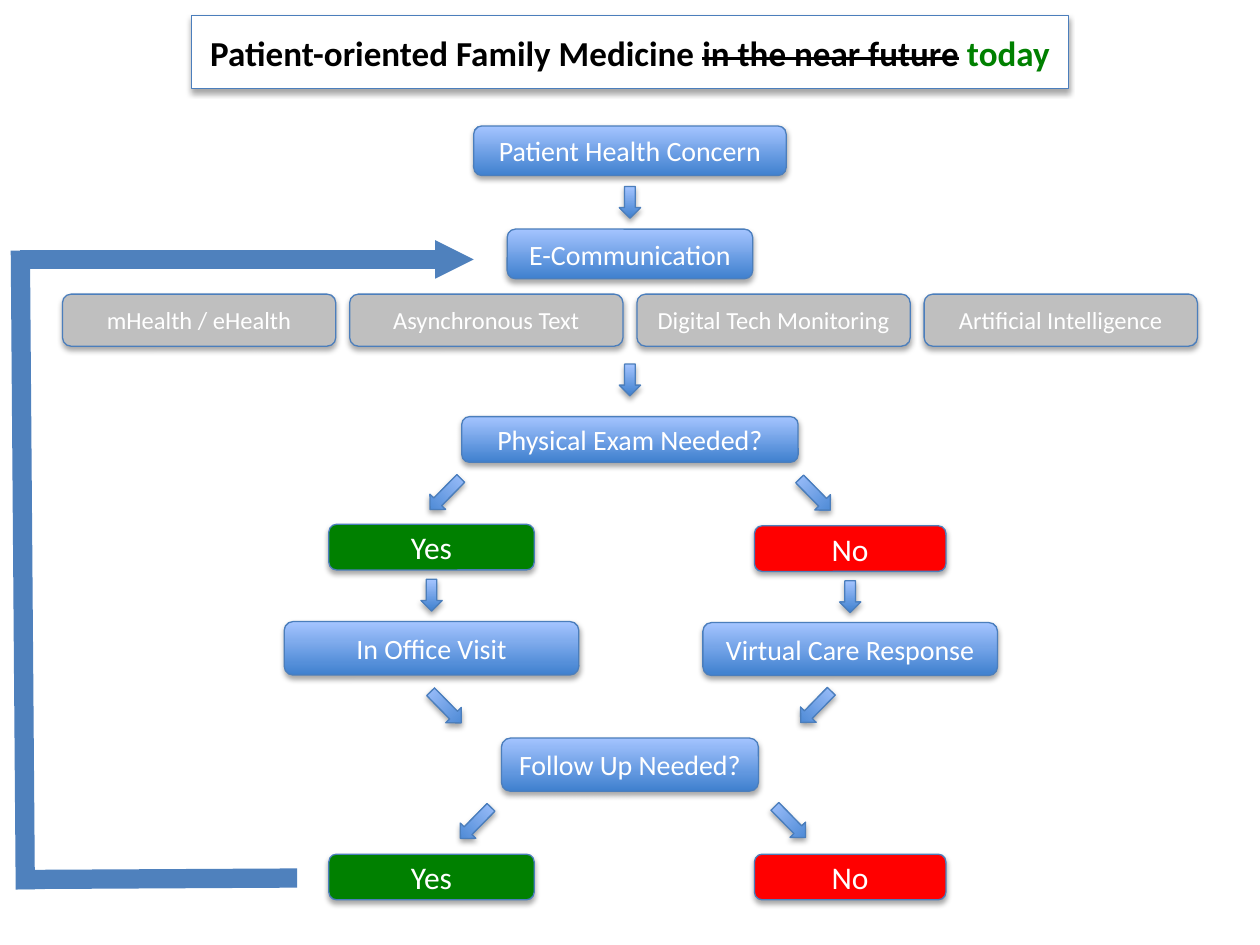
"""Flowchart of patient-oriented family medicine, from health concern to follow-up."""
from dataclasses import dataclass
from typing import Any

from lxml import etree
from pptx import Presentation
from pptx.dml.color import RGBColor
from pptx.enum import shapes, text
from pptx.oxml import parse_xml
from pptx.oxml.ns import nsdecls, qn
from pptx.util import Cm, Pt


@dataclass(frozen=True)
class Theme:
    """Colours, font and sizes of the flowchart."""
    font: str = "Calibri"
    title_size: int = 20
    answer_size: int = 18
    step_size: int = 16
    channel_size: int = 14
    white: str = "FFFFFF"
    ink: str = "000000"
    green: str = "008000"
    red: str = "FF0000"
    grey: str = "BFBFBF"
    outline: str = "4B7EBC"
    loop: str = "4F81BD"
    gradient: tuple[str, str] = ("3F80CE", "A4C4FF")


THEME = Theme()
CENTRE, YES_X, NO_X = 12.7, 8.7, 17.14
TILT = 44.5


@dataclass(frozen=True)
class Box:
    """A labelled step, placed by its centre line and top in cm."""
    label: str
    centre: float
    top: float
    width: float
    height: float
    size: int = THEME.step_size
    fill: str | None = None


@dataclass(frozen=True)
class Arrow:
    """A block arrow, placed by its middle in cm."""
    centre: float
    middle: float
    tilt: float = 0


@dataclass(frozen=True)
class LoopLine:
    """One leg of the follow-up loop, in cm."""
    start: tuple[float, float]
    end: tuple[float, float]
    arrowhead: bool = False


def answers(yes_top: float, no_top: float) -> list[Box]:
    """Return a yes and no pair."""
    size = THEME.answer_size
    return [Box("Yes", YES_X, yes_top, 4.14, 0.92, size, THEME.green),
            Box("No", NO_X, no_top, 3.86, 0.92, size, THEME.red)]


CHANNELS = ("mHealth / eHealth", "Asynchronous Text",
            "Digital Tech Monitoring", "Artificial Intelligence")
CHANNEL_PITCH = 5.79
BOXES = [
    Box("Patient Health Concern", CENTRE, 2.54, 6.3, 1),
    Box("E-Communication", CENTRE, 4.62, 4.95, 1),
    *(Box(channel, CENTRE + (i - 1.5) * CHANNEL_PITCH, 5.93, 5.51, 1.05,
          THEME.channel_size, THEME.grey) for i, channel in enumerate(CHANNELS)),
    Box("Physical Exam Needed?", CENTRE, 8.4, 6.78, 0.92),
    *answers(10.57, 10.6),
    Box("In Office Visit", YES_X, 12.53, 5.94, 1.08),
    Box("Virtual Care Response", NO_X, 12.55, 5.94, 1.07),
    Box("Follow Up Needed?", CENTRE, 14.88, 5.18, 1.07),
    *answers(17.22, 17.22),
]
ARROWS = [
    Arrow(CENTRE, 4.08), Arrow(CENTRE, 7.66), Arrow(YES_X, 12), Arrow(NO_X, 12.03),
    Arrow(8.98, 9.96, TILT), Arrow(16.43, 9.97, -TILT),
    Arrow(8.99, 14.26, -TILT), Arrow(16.45, 14.25, TILT),
    Arrow(9.59, 16.59, TILT), Arrow(15.93, 16.57, -TILT),
]
LOOP = [
    LoopLine((5.99, 17.7), (0.36, 17.73)),
    LoopLine((0.51, 17.93), (0.41, 5.05)),
    LoopLine((9.55, 5.23), (0.41, 5.23), arrowhead=True),
]
TITLE_RUNS = (("Patient-oriented Family Medicine ", THEME.ink, False),
              ("in the near future", THEME.ink, True),
              (" today", THEME.green, False))
FRAME_FORMAT = {"word_wrap": True, "auto_size": text.MSO_AUTO_SIZE.NONE,
                "vertical_anchor": text.MSO_ANCHOR.MIDDLE,
                "margin_left": 0, "margin_right": 0}


def apply(target: Any, values: dict[str, Any]) -> None:
    """Set each named attribute on the target."""
    for name, value in values.items():
        setattr(target, name, value)


def style_surface(surface: Any, fill: str | None) -> None:
    """Give a solid or gradient fill, an outline and a soft shadow."""
    if fill:
        surface.fill.solid()
        surface.fill.fore_color.rgb = RGBColor.from_string(fill)
    else:
        surface.fill.gradient()
        surface.fill.gradient_angle = 90
        for stop, colour in zip(surface.fill.gradient_stops, THEME.gradient):
            stop.color.rgb = RGBColor.from_string(colour)
    surface.line.color.rgb = RGBColor.from_string(THEME.outline)
    surface.line.width = Pt(0.75)
    surface.shadow.inherit = False
    effects = surface._element.spPr.find(qn("a:effectLst"))
    effects.append(parse_xml(
        f'<a:outerShdw {nsdecls("a")} blurRad="40000" dist="23000" dir="5400000" '
        'rotWithShape="0"><a:srgbClr val="000000"><a:alpha val="35000"/>'
        '</a:srgbClr></a:outerShdw>'))


def add_run(paragraph: Any, wording: str, size: int, colour: str, bold: bool = False) -> Any:
    """Append a formatted run and return it."""
    run = paragraph.add_run()
    run.text = wording
    apply(run.font, {"name": THEME.font, "size": Pt(size), "bold": bold})
    run.font.color.rgb = RGBColor.from_string(colour)
    return run


def centred_paragraph(surface: Any) -> Any:
    """Format the text frame and return its centred paragraph."""
    apply(surface.text_frame, FRAME_FORMAT)
    paragraph = surface.text_frame.paragraphs[0]
    paragraph.alignment = text.PP_ALIGN.CENTER
    return paragraph


def format_title(title: Any) -> None:
    """Turn the title placeholder into the rounded heading."""
    apply(title, {"left": Cm(3.86), "top": Cm(0.31), "width": Cm(17.68), "height": Cm(1.48)})
    outline = etree.SubElement(title._element.spPr, qn("a:prstGeom"), prst="roundRect")
    etree.SubElement(outline, qn("a:avLst"))
    style_surface(title, THEME.white)
    paragraph = centred_paragraph(title)
    for wording, colour, struck in TITLE_RUNS:
        run = add_run(paragraph, wording, THEME.title_size, colour, bold=True)
        if struck:
            run._r.get_or_add_rPr().set("strike", "sngStrike")


def draw_box(slide: Any, box: Box) -> None:
    """Draw one labelled step."""
    step = slide.shapes.add_shape(
        shapes.MSO_SHAPE.ROUNDED_RECTANGLE, Cm(box.centre - box.width / 2), Cm(box.top),
        Cm(box.width), Cm(box.height))
    style_surface(step, box.fill)
    add_run(centred_paragraph(step), box.label, box.size, THEME.white)


def draw_arrow(slide: Any, arrow: Arrow) -> None:
    """Draw one block arrow, longer when tilted."""
    width, height = (0.44, 0.88) if arrow.tilt else (0.43, 0.64)
    pointer = slide.shapes.add_shape(
        shapes.MSO_SHAPE.DOWN_ARROW, Cm(arrow.centre - width / 2),
        Cm(arrow.middle - height / 2), Cm(width), Cm(height))
    pointer.rotation = arrow.tilt
    style_surface(pointer, None)


def draw_loop_line(slide: Any, leg: LoopLine) -> None:
    """Draw one thick leg of the loop."""
    points = [Cm(value) for value in (*leg.start, *leg.end)]
    connector = slide.shapes.add_connector(shapes.MSO_CONNECTOR.STRAIGHT, *points)
    connector.line.color.rgb = RGBColor.from_string(THEME.loop)
    connector.line.width = Pt(11)
    if leg.arrowhead:
        etree.SubElement(connector.line._get_or_add_ln(), qn("a:headEnd"),
                         type="triangle", w="sm", len="sm")
    etree.SubElement(connector._element.spPr, qn("a:effectLst"))


def main() -> None:
    """Build and save the slide."""
    deck = Presentation()
    apply(deck, {"slide_width": Cm(25.4), "slide_height": Cm(19.05)})
    slide = deck.slides.add_slide(deck.slide_layouts[5])
    format_title(slide.shapes.title)
    for draw, items in ((draw_box, BOXES), (draw_arrow, ARROWS), (draw_loop_line, LOOP)):
        for item in items:
            draw(slide, item)
    deck.save("out.pptx")


if __name__ == "__main__":
    main()
